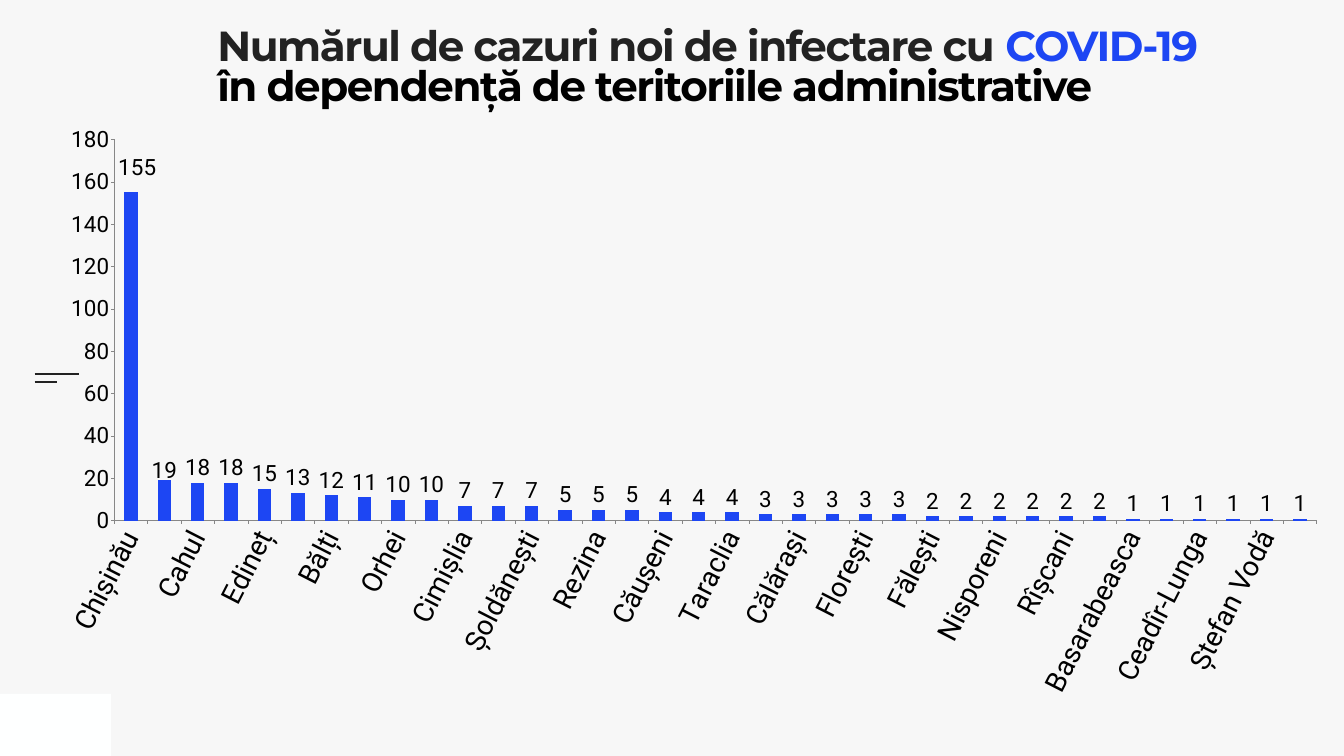
from typing import NamedTuple

from pptx import Presentation
from pptx.chart.data import CategoryChartData
from pptx.dml.color import RGBColor
from pptx.enum.chart import XL_CHART_TYPE, XL_LABEL_POSITION, XL_TICK_MARK
from pptx.enum.shapes import MSO_CONNECTOR, MSO_SHAPE
from pptx.enum.text import MSO_ANCHOR, MSO_AUTO_SIZE, PP_ALIGN
from pptx.oxml import parse_xml
from pptx.oxml.ns import nsdecls
from pptx.util import Cm, Pt

BACK = RGBColor(0xF7, 0xF7, 0xF7)
WHITE = RGBColor(0xFE, 0xFF, 0xFF)
DARK = RGBColor(0x22, 0x22, 0x22)
BLACK = RGBColor(0, 0, 0)
BLUE = RGBColor(0x1D, 0x46, 0xF3)
GRAY = RGBColor(0x87, 0x87, 0x87)


class Rule(NamedTuple):
    left: float
    right: float
    top: float


class Shift(NamedTuple):
    point: int
    x: float
    y: float


RULES = [Rule(1.75, 3.99, 18.84), Rule(1.75, 2.87, 19.26)]
SHIFTS = [Shift(0, 0.005, -0.017), Shift(1, 0, 0.008)]
CASES = {
    "Chișinău": 155, "Transnistria": 19, "Cahul": 18, "Ialoveni": 18,
    "Edineț": 15, "Anenii Noi": 13, "Bălți": 12, "Soroca": 11,
    "Orhei": 10, "Sîngerei": 10, "Cimișlia": 7, "Comrat": 7,
    "Șoldănești": 7, "Drochia": 5, "Rezina": 5, "Strășeni": 5,
    "Căușeni": 4, "Leova": 4, "Taraclia": 4, "Briceni": 3,
    "Călărași": 3, "Criuleni": 3, "Florești": 3, "Hîncești": 3,
    "Fălești": 2, "Glodeni": 2, "Nisporeni": 2, "Ocnița": 2,
    "Rîșcani": 2, "Vulcănești": 2, "Basarabeasca": 1, "Cantemir": 1,
    "Ceadîr-Lunga": 1, "Dondușeni": 1, "Ștefan Vodă": 1, "Telenești": 1,
}


def add_text(para, text: str, *, color: RGBColor, size=60, font="Montserrat",
             bold=True, space=-2) -> None:
    run = para.add_run()
    run.text = text
    run.font.size = Pt(size)
    run.font.name = font
    run.font.bold = bold
    run.font.color.rgb = color
    run._r.get_or_add_rPr().set("spc", str(space * 100))


def add_rule(slide, rule: Rule) -> None:
    line = slide.shapes.add_connector(
        MSO_CONNECTOR.STRAIGHT, Cm(rule.left), Cm(rule.top),
        Cm(rule.right), Cm(rule.top))
    line.line.color.rgb = DARK
    line.line.width = Pt(3)
    line._element.spPr.append(parse_xml(f"<a:effectLst {nsdecls('a')}/>"))


def make_layout(inner: str):
    return parse_xml(f"<c:layout {nsdecls('c')}><c:manualLayout>{inner}"
                     "</c:manualLayout></c:layout>")


def set_title(slide) -> None:
    title = slide.shapes.title
    title.left, title.top = Cm(10.95), Cm(1.47)
    title.width, title.height = Cm(50.85), Cm(6.93)
    frame = title.text_frame
    frame.margin_left = frame.margin_right = 0
    frame.margin_top = frame.margin_bottom = 0
    frame.auto_size = MSO_AUTO_SIZE.NONE
    frame.vertical_anchor = MSO_ANCHOR.TOP
    first, second = frame.paragraphs[0], frame.add_paragraph()
    for para in (first, second):
        para.alignment = PP_ALIGN.LEFT
        para.line_spacing = 0.8
    add_text(first, "Numărul de cazuri noi de infectare cu ", color=DARK)
    add_text(first, "COVID-19", color=BLUE)
    add_text(second, "în dependență de teritoriile administrative", color=BLACK)


def style_font(font, size: int) -> None:
    font.size = Pt(size)
    font.name = "Roboto"
    font.color.rgb = BLACK


def style_axis(axis, size: int) -> None:
    axis.has_major_gridlines = False
    axis.major_tick_mark = XL_TICK_MARK.OUTSIDE
    axis.minor_tick_mark = XL_TICK_MARK.NONE
    axis.format.line.color.rgb = GRAY
    axis.format.line.width = Pt(0.75)
    style_font(axis.tick_labels.font, size)


def add_cases(slide) -> None:
    data = CategoryChartData()
    data.categories = list(CASES)
    data.add_series("Series 1", list(CASES.values()))
    chart = slide.shapes.add_chart(
        XL_CHART_TYPE.COLUMN_CLUSTERED, Cm(2.9), Cm(6.35),
        Cm(63.93), Cm(30.1), data).chart
    chart.has_title = chart.has_legend = False
    style_font(chart.font, 40)

    # Axes
    style_axis(chart.category_axis, 40)
    scale = chart.value_axis
    style_axis(scale, 32)
    scale.minimum_scale, scale.maximum_scale, scale.major_unit = 0, 180, 20

    # Columns and their labels
    plot = chart.plots[0]
    plot.gap_width = 150
    plot.vary_by_categories = False
    series = plot.series[0]
    series.format.fill.solid()
    series.format.fill.fore_color.rgb = BLUE
    labels = series.data_labels
    labels.show_value = True
    labels.position = XL_LABEL_POSITION.OUTSIDE_END
    style_font(labels.font, 32)
    for shift in SHIFTS:
        label = series.points[shift.point].data_label
        style_font(label.font, 32)
        label.position = XL_LABEL_POSITION.OUTSIDE_END

    # Slanted names, every second one shown; plot area and label places
    root = chart.element
    root.xpath(".//c:catAx/c:txPr/a:bodyPr")[0].set("rot", str(-63 * 60000))
    root.xpath(".//c:catAx/c:noMultiLvlLbl")[0].addprevious(
        parse_xml(f'<c:tickLblSkip {nsdecls("c")} val="2"/>'))
    for node, shift in zip(root.xpath(".//c:dLbl/c:idx"), SHIFTS):
        node.addnext(make_layout(
            f'<c:x val="{shift.x}"/><c:y val="{shift.y}"/>'))
    area = root.xpath(".//c:plotArea")[0]
    for old in area.xpath("./c:layout"):
        area.remove(old)
    area.insert(0, make_layout(
        '<c:layoutTarget val="inner"/><c:xMode val="edge"/>'
        '<c:yMode val="edge"/><c:x val="0.0447"/><c:y val="0.0225"/>'
        '<c:w val="0.948"/><c:h val="0.6385"/>'))


def main() -> None:
    deck = Presentation()
    deck.slide_width, deck.slide_height = Cm(67.74), Cm(38.1)
    slide = deck.slides.add_slide(deck.slide_layouts[5])
    slide.background.fill.solid()
    slide.background.fill.fore_color.rgb = BACK

    # Corner block and short rules at the left edge
    block = slide.shapes.add_shape(
        MSO_SHAPE.RECTANGLE, 0, Cm(34.97), Cm(5.59), Cm(3.13))
    block.shadow.inherit = False
    block.fill.solid()
    block.fill.fore_color.rgb = WHITE
    block.line.fill.background()
    for rule in RULES:
        add_rule(slide, rule)

    set_title(slide)
    add_cases(slide)
    deck.save("out.pptx")


if __name__ == "__main__":
    main()
